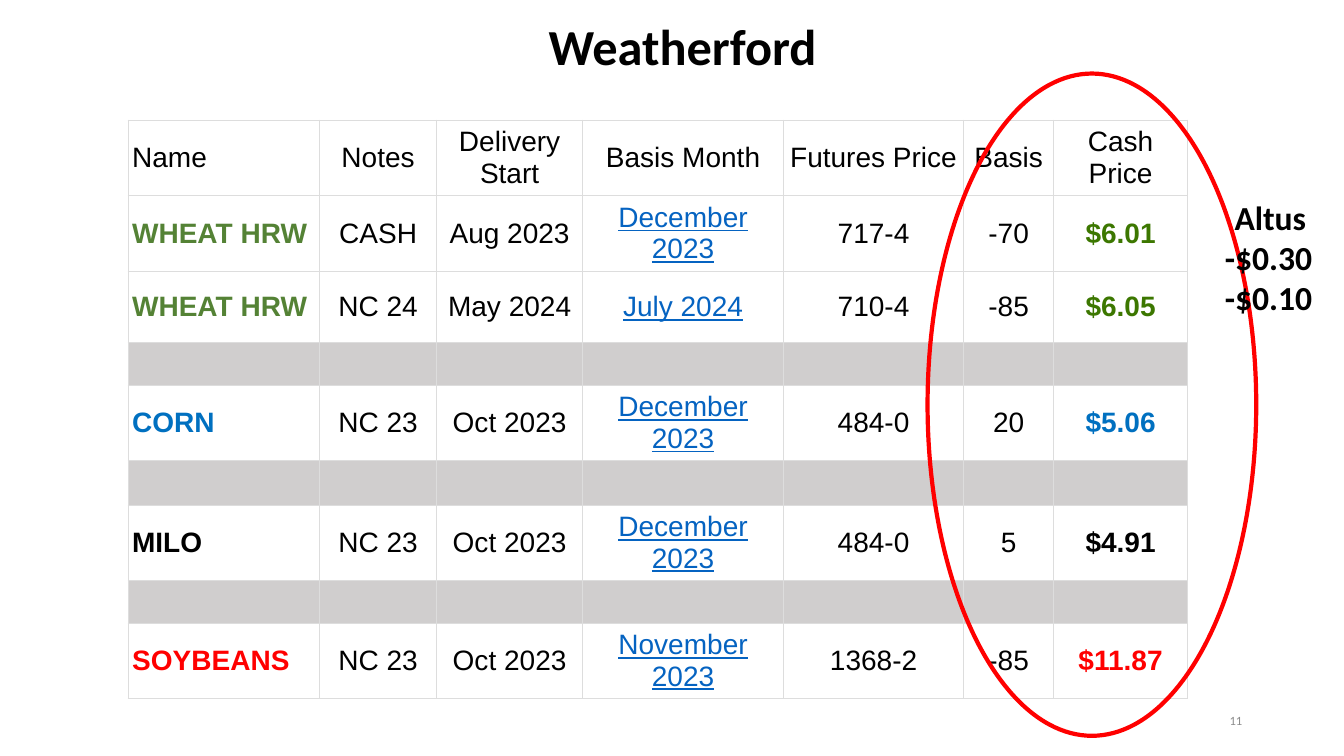
from dataclasses import dataclass

from lxml.etree import SubElement
from pptx import Presentation
from pptx.dml.color import RGBColor
from pptx.enum.shapes import MSO_SHAPE
from pptx.enum.text import MSO_ANCHOR, PP_ALIGN
from pptx.oxml.ns import qn
from pptx.util import Pt

PX = 9144


@dataclass(frozen=True)
class Theme:
    heading_font: str = "Calibri"
    table_font: str = "Arial"
    black: str = "000000"
    wheat_name: str = "548235"
    wheat_price: str = "3C7700"
    corn: str = "0070C0"
    red: str = "FF0000"
    link: str = "0563C1"
    separator: str = "D0CECE"
    border: str = "DDDDDD"
    number: str = "8C8C8C"
    title_size: int = 36
    note_size: int = 24
    table_size: int = 20
    number_size: int = 9
    border_width: float = 0.6
    ellipse_width: int = 3


THEME = Theme()
COLUMN_WIDTHS = [190, 116, 145, 199, 179, 89, 133]
TEXT_ROW, SINGLE_ROW = 75, 71
HEADERS = ["Name", "Notes", "Delivery Start", "Basis Month", "Futures Price", "Basis", "Cash Price"]
WHEAT = (THEME.wheat_name, THEME.wheat_price)
ROWS = [
    (TEXT_ROW, HEADERS, None),
    (TEXT_ROW, ["WHEAT HRW", "CASH", "Aug 2023", "December 2023", "717-4", "-70", "$6.01"], WHEAT),
    (SINGLE_ROW, ["WHEAT HRW", "NC 24", "May 2024", "July 2024", "710-4", "-85", "$6.05"], WHEAT),
    (42, None, None),
    (TEXT_ROW, ["CORN", "NC 23", "Oct 2023", "December 2023", "484-0", "20", "$5.06"],
     (THEME.corn, THEME.corn)),
    (44, None, None),
    (TEXT_ROW, ["MILO", "NC 23", "Oct 2023", "December 2023", "484-0", "5", "$4.91"],
     (THEME.black, THEME.black)),
    (42, None, None),
    (TEXT_ROW, ["SOYBEANS", "NC 23", "Oct 2023", "November 2023", "1368-2", "-85", "$11.87"],
     (THEME.red, THEME.red)),
]
NAME_COLUMN, MONTH_COLUMN, PRICE_COLUMN = 0, 3, 6


def emu(box):
    return [length * PX for length in box]


def add_run(paragraph, text, font, size, color, bold=False, underline=False):
    run = paragraph.add_run()
    run.text = text
    run.font.name = font
    run.font.size = Pt(size)
    run.font.bold = bold
    run.font.underline = underline
    run.font.color.rgb = RGBColor.from_string(color)


def add_title(slide, box, text):
    title = slide.shapes.title
    title.left, title.top, title.width, title.height = emu(box)
    frame = title.text_frame
    frame.word_wrap = True
    frame.vertical_anchor = MSO_ANCHOR.MIDDLE
    paragraph = frame.paragraphs[0]
    paragraph.alignment = PP_ALIGN.LEFT
    add_run(paragraph, text, THEME.heading_font, THEME.title_size, THEME.black, bold=True)


def set_borders(cell):
    properties = cell._tc.get_or_add_tcPr()
    for position, side in enumerate(("a:lnL", "a:lnR", "a:lnT", "a:lnB")):
        line = SubElement(properties, qn(side), w=str(Pt(THEME.border_width)))
        fill = SubElement(line, qn("a:solidFill"))
        SubElement(fill, qn("a:srgbClr"), val=THEME.border)
        properties.insert(position, line)


def fill_cell(cell, column, text, accents):
    color, bold, underline = THEME.black, False, False
    if accents and column in (NAME_COLUMN, PRICE_COLUMN):
        color, bold = accents[column == PRICE_COLUMN], True
    elif accents and column == MONTH_COLUMN:
        color, underline = THEME.link, True
    paragraph = cell.text_frame.paragraphs[0]
    paragraph.alignment = PP_ALIGN.LEFT if column == NAME_COLUMN else PP_ALIGN.CENTER
    add_run(paragraph, text, THEME.table_font, THEME.table_size, color, bold, underline)


def add_price_table(slide, left, top):
    heights = [height for height, _, _ in ROWS]
    box = (left, top, sum(COLUMN_WIDTHS), sum(heights))
    table = slide.shapes.add_table(len(ROWS), len(COLUMN_WIDTHS), *emu(box)).table
    table.first_row = False
    table.horz_banding = False
    for column, width in zip(table.columns, COLUMN_WIDTHS):
        column.width = width * PX
    for row, (height, texts, accents) in zip(table.rows, ROWS):
        row.height = height * PX
        for index, cell in enumerate(row.cells):
            cell.margin_left = cell.margin_right = cell.margin_top = cell.margin_bottom = 4 * PX
            cell.vertical_anchor = MSO_ANCHOR.MIDDLE
            if texts:
                cell.fill.background()
                fill_cell(cell, index, texts[index], accents)
            else:
                cell.fill.solid()
                cell.fill.fore_color.rgb = RGBColor.from_string(THEME.separator)
            set_borders(cell)


def add_highlight(slide, box):
    ellipse = slide.shapes.add_shape(MSO_SHAPE.OVAL, *emu(box))
    ellipse.shadow.inherit = False
    ellipse.fill.background()
    ellipse.line.color.rgb = RGBColor.from_string(THEME.red)
    ellipse.line.width = Pt(THEME.ellipse_width)


def add_altus_note(slide, box):
    frame = slide.shapes.add_textbox(*emu(box)).text_frame
    frame.word_wrap = True
    lines = [("Altus", PP_ALIGN.CENTER), ("-$0.30", PP_ALIGN.LEFT), ("-$0.10", PP_ALIGN.LEFT)]
    for index, (text, alignment) in enumerate(lines):
        paragraph = frame.add_paragraph() if index else frame.paragraphs[0]
        paragraph.alignment = alignment
        add_run(paragraph, text, THEME.heading_font, THEME.note_size, THEME.black, bold=True)


def add_slide_number(slide, box, text):
    frame = slide.shapes.add_textbox(*emu(box)).text_frame
    frame.word_wrap = True
    frame.vertical_anchor = MSO_ANCHOR.MIDDLE
    paragraph = frame.paragraphs[0]
    paragraph.alignment = PP_ALIGN.RIGHT
    add_run(paragraph, text, THEME.heading_font, THEME.number_size, THEME.number)


def build_price_slide(presentation):
    slide = presentation.slides.add_slide(presentation.slide_layouts.get_by_name("Title Only"))
    add_title(slide, (534, 9, 300, 71), "Weatherford")
    add_price_table(slide, 127, 119)
    add_highlight(slide, (920, 73, 326, 657))
    add_altus_note(slide, (1205, 190, 110, 131))
    add_slide_number(slide, (942, 695, 300, 40), "11")


def main():
    presentation = Presentation()
    presentation.slide_width, presentation.slide_height = emu((1333, 750))
    build_price_slide(presentation)
    presentation.save("out.pptx")


if __name__ == "__main__":
    main()
